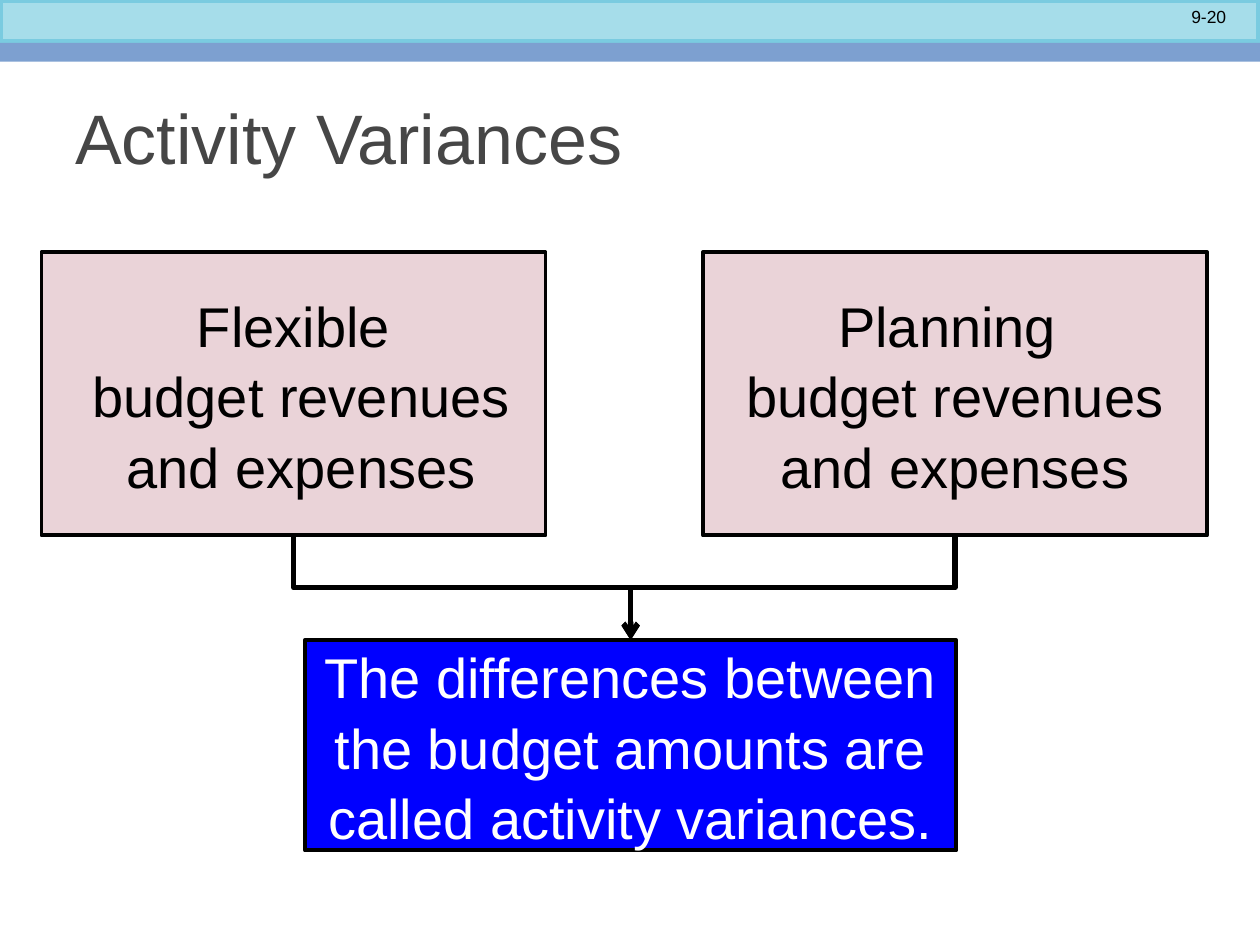
from dataclasses import dataclass
from typing import Optional

import pptx
import pptx.dml.color
import pptx.enum.shapes
import pptx.enum.text
import pptx.oxml
import pptx.oxml.ns
import pptx.util

Inches = pptx.util.Inches
Pt = pptx.util.Pt
RGBColor = pptx.dml.color.RGBColor
Align = pptx.enum.text.PP_ALIGN
Anchor = pptx.enum.text.MSO_ANCHOR

BLACK = RGBColor(0x00, 0x00, 0x00)
WHITE = RGBColor(0xFF, 0xFF, 0xFF)
GREY = RGBColor(0x46, 0x46, 0x46)
PINK = RGBColor(0xEA, 0xD3, 0xD8)
BLUE = RGBColor(0x00, 0x00, 0xFF)
AQUA = RGBColor(0xA6, 0xDD, 0xEA)
AQUA_EDGE = RGBColor(0x7A, 0xCB, 0xE0)
STEEL = RGBColor(0x7D, 0xA0, 0xD0)

FONT = "Arial"


@dataclass
class Area:
    left: float
    top: float
    width: float
    height: float

    def lengths(self) -> tuple:
        return tuple(Inches(n) for n in (self.left, self.top, self.width, self.height))


@dataclass
class Band:
    area: Area
    fill: RGBColor
    edge: Optional[RGBColor] = None
    edge_width: float = 0


@dataclass
class BudgetBox:
    area: Area
    fill: RGBColor
    text_color: RGBColor
    paragraphs: list[str]


BANDS = [
    Band(Area(0, 0, 10, 0.34), AQUA, AQUA_EDGE, 4),
    Band(Area(0, 0.4, 10, 0.09), STEEL),
    Band(Area(0, 0.34, 10, 0.1), STEEL),
]
FLEXIBLE = BudgetBox(Area(0.33, 2, 4, 2.25), PINK, BLACK,
                     ["Flexible", " budget revenues\n and expenses"])
PLANNING = BudgetBox(Area(5.58, 2, 4, 2.25), PINK, BLACK,
                     ["Planning ", "budget revenues\nand expenses"])
VARIANCES = BudgetBox(Area(2.42, 5.08, 5.17, 1.67), BLUE, WHITE,
                      ["The differences between the budget amounts "
                       "are called activity variances."])


def write(shape, paragraphs: list[str], size: float, color: RGBColor,
          align: Align, anchor: Anchor, spacing: float = 1.0) -> None:
    frame = shape.text_frame
    frame.word_wrap = True
    frame.vertical_anchor = anchor
    for index, text in enumerate(paragraphs):
        para = frame.add_paragraph() if index else frame.paragraphs[0]
        para.alignment = align
        para.line_spacing = spacing
        for number, line in enumerate(text.split("\n")):
            if number:
                para.add_line_break()
            span = para.add_run()
            span.text = line
            span.font.name = FONT
            span.font.size = Pt(size)
            span.font.color.rgb = color


def add_band(page, band: Band):
    shape = page.shapes.add_shape(
        pptx.enum.shapes.MSO_SHAPE.RECTANGLE, *band.area.lengths())
    shape.shadow.inherit = False
    shape.fill.solid()
    shape.fill.fore_color.rgb = band.fill
    if band.edge is None:
        shape.line.fill.background()
    else:
        shape.line.color.rgb = band.edge
        shape.line.width = Pt(band.edge_width)
    return shape


def add_budget_box(page, budget: BudgetBox):
    box = add_band(page, Band(budget.area, budget.fill, BLACK, 2.25))
    write(box, budget.paragraphs, 32, budget.text_color,
          Align.CENTER, Anchor.MIDDLE, 1.05)
    return box


def add_label(page, area: Area, text: str, size: float, color: RGBColor,
              align: Align, anchor: Anchor) -> None:
    box = page.shapes.add_textbox(*area.lengths())
    write(box, [text], size, color, align, anchor)


def add_elbow_arrow(page, source, target) -> None:
    """Run down from the source's bottom, across, and down to the target's top."""
    start_x = source.left + source.width // 2
    start_y = source.top + source.height
    end_x = target.left + target.width // 2
    arrow = page.shapes.add_connector(
        pptx.enum.shapes.MSO_CONNECTOR.ELBOW, start_x, start_y, end_x, target.top)
    arrow.begin_connect(source, 2)
    arrow.end_connect(target, 0)
    arrow.line.color.rgb = BLACK
    arrow.line.width = Pt(3)

    # A quarter turn makes the elbow leave vertically; its frame swaps sides.
    across, down = abs(end_x - start_x), target.top - start_y
    arrow.left = (start_x + end_x - down) // 2
    arrow.top = (start_y + target.top - across) // 2
    arrow.width, arrow.height = down, across
    rightward = end_x > start_x
    properties = arrow._element.spPr
    frame = properties.find(pptx.oxml.ns.qn("a:xfrm"))
    frame.set("rot", str((270 if rightward else 90) * 60000))
    frame.set("flipH", "1" if rightward else "0")

    line = arrow.line._get_or_add_ln()
    line.append(pptx.oxml.parse_xml(
        f'<a:tailEnd {pptx.oxml.ns.nsdecls("a")} type="arrow"/>'))
    properties.append(pptx.oxml.parse_xml(
        f'<a:effectLst {pptx.oxml.ns.nsdecls("a")}/>'))


def main() -> None:
    deck = pptx.Presentation()
    deck.slide_width, deck.slide_height = Inches(10), Inches(7.5)
    page = deck.slides.add_slide(deck.slide_layouts[6])

    for band in BANDS:
        add_band(page, band)
    add_label(page, Area(8.5, 0, 1.33, 0.27), "9-20", 10, BLACK,
              Align.RIGHT, Anchor.TOP)
    add_label(page, Area(0.5, 0.5, 9, 1.17), "Activity Variances", 40, GREY,
              Align.LEFT, Anchor.MIDDLE)

    flexible, planning, variances = (
        add_budget_box(page, budget) for budget in (FLEXIBLE, PLANNING, VARIANCES))
    for source in (flexible, planning):
        add_elbow_arrow(page, source, variances)

    deck.save("out.pptx")


if __name__ == "__main__":
    main()
